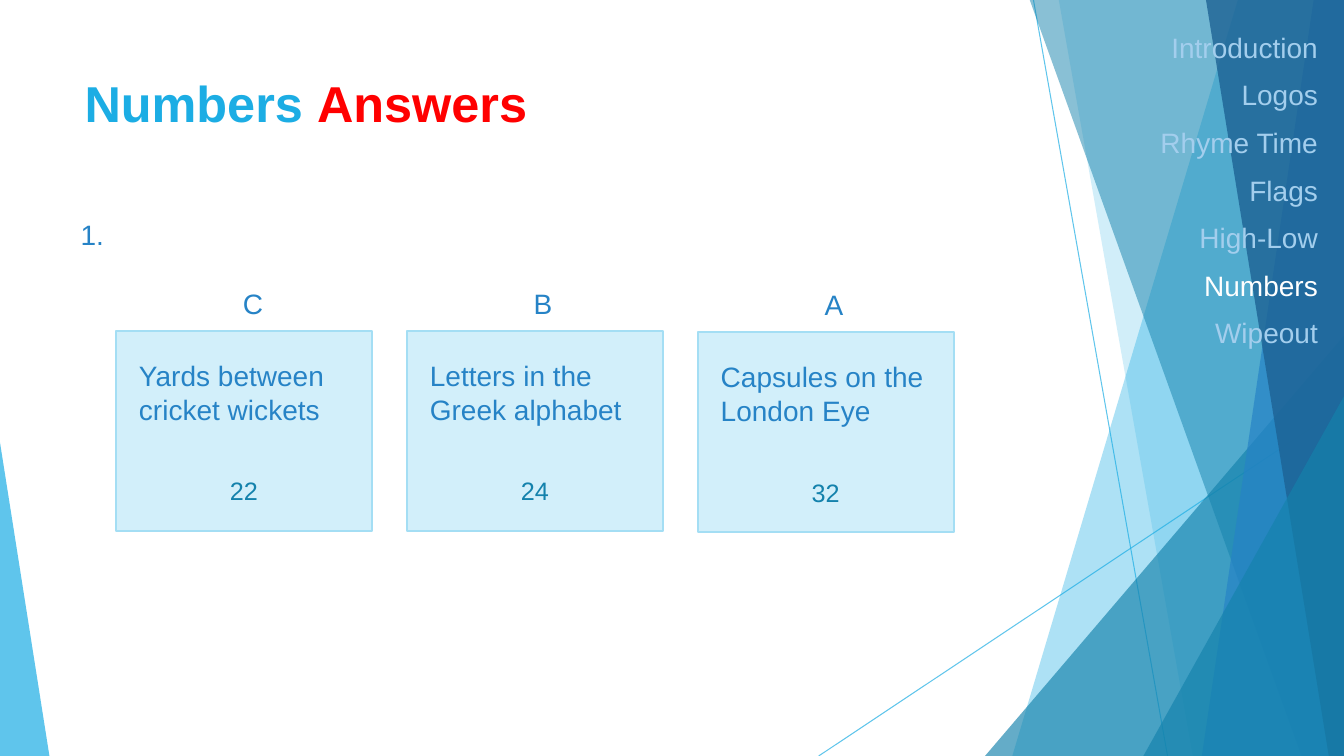
import pptx
import pptx.util
import pptx.dml.color
import pptx.enum.shapes
import pptx.enum.text
import pptx.oxml
import pptx.oxml.ns
from lxml import etree

Inches, Pt = pptx.util.Inches, pptx.util.Pt
RGB = pptx.dml.color.RGBColor
SHAPE = pptx.enum.shapes.MSO_SHAPE
ALIGN = pptx.enum.text.PP_ALIGN
ANCHOR = pptx.enum.text.MSO_ANCHOR

SKY, TEAL, BLUE = RGB(0x1C, 0xAD, 0xE4), RGB(0x14, 0x82, 0xAC), RGB(0x26, 0x83, 0xC6)
NAVY, RED, WHITE = RGB(0x1D, 0x62, 0x94), RGB(0xFF, 0, 0), RGB(0xFF, 0xFF, 0xFF)
PALE, EDGE, FADED = RGB(0xD2, 0xEF, 0xFA), RGB(0xA4, 0xDE, 0xF4), RGB(0xA3, 0xCE, 0xED)

WIDE, HIGH = 13.33, 7.5
TITLE = [("Numbers ", SKY), ("Answers", RED)]
ROUNDS = ["Introduction", "Logos", "Rhyme Time", "Flags", "High-Low", "Numbers", "Wipeout"]
ACTIVE = "Numbers"
# letter, clue, answer, top of card
CARDS = [
    ("C", "Yards between cricket wickets", "22", 3.28),
    ("B", "Letters in the Greek alphabet", "24", 3.28),
    ("A", "Capsules on the London Eye", "32", 3.29),
]
CARD_X, CARD_W, CARD_H, PITCH = 1.15, 2.54, 1.99, 2.885

RAYS = [((10.25, 0), (11.58, HIGH)), ((WIDE, 4.03), (8.12, HIGH))]
# bands: top left x, bottom left x, colour, opacity
# wedges: left, top, width, apex, colour, opacity
DECOR = [
    ("band", 12.28, 10.04, SKY, 36),
    ("band", 10.5, 11.83, SKY, 20),
    ("wedge", 9.77, 3.33, 3.56, 1, TEAL, 66),
    ("band", 10.21, 12.91, TEAL, 50),
    ("band", 13.03, 11.92, BLUE, 70),
    ("band", 11.96, 13.18, NAVY, 80),
    ("wedge", 11.34, 3.93, 1.99, 1, TEAL, 66),
    ("wedge", 0, 4.39, 0.49, 0, SKY, 70),
]

deck = pptx.Presentation()
deck.slide_width, deck.slide_height = Inches(WIDE), Inches(HIGH)
shapes = deck.slides.add_slide(deck.slide_layouts[6]).shapes


def fade(fill, alpha):
    """Set the opacity, in percent, of a solid fill's colour."""
    color = fill._xPr.find(".//" + pptx.oxml.ns.qn("a:srgbClr"))
    etree.SubElement(color, pptx.oxml.ns.qn("a:alpha"), val=str(alpha * 1000))


def paint(shape, color, alpha):
    shape.shadow.inherit = False
    shape.fill.solid()
    shape.fill.fore_color.rgb = color
    fade(shape.fill, alpha)
    shape.line.fill.background()


def add_ray(start, end):
    ray = shapes.add_connector(pptx.enum.shapes.MSO_CONNECTOR.STRAIGHT,
                               *map(Inches, start + end))
    ray.line.width = Pt(0.75)
    ray.line.color.rgb = SKY
    fade(ray.line.fill, 70)
    etree.SubElement(ray._element.spPr, pptx.oxml.ns.qn("a:effectLst"))


def add_band(top_x, low_x, color, alpha):
    pen = shapes.build_freeform(Inches(top_x), Inches(-0.01))
    pen.add_line_segments([(Inches(x), Inches(y)) for x, y in
                           [(WIDE, -0.01), (WIDE, HIGH), (low_x, HIGH)]])
    paint(pen.convert_to_shape(), color, alpha)


def add_wedge(left, top, width, apex, color, alpha):
    wedge = shapes.add_shape(SHAPE.ISOSCELES_TRIANGLE,
                             *map(Inches, (left, top, width, HIGH - top)))
    wedge.adjustments[0] = apex
    paint(wedge, color, alpha)


def write(para, text, color, size=20, **extra):
    run = para.add_run()
    run.text = text
    run.font.color.rgb = color
    form = {"name": "Arial", "size": Pt(size), **extra}
    for key, value in form.items():
        setattr(run.font, key, value)


def add_box(left, top, width, height, wrap=True):
    frame = shapes.add_textbox(*map(Inches, (left, top, width, height))).text_frame
    frame.word_wrap = wrap
    return frame


def add_card(left, top, letter, clue, answer):
    card = shapes.add_shape(SHAPE.RECTANGLE, *map(Inches, (left, top, CARD_W, CARD_H)))
    paint(card, PALE, 100)
    card.line.color.rgb = EDGE
    card.line.width = Pt(1.5)
    frame = card.text_frame
    frame.vertical_anchor = ANCHOR.BOTTOM
    frame.margin_bottom = Inches(0.25)
    frame.paragraphs[0].alignment = ALIGN.CENTER
    write(frame.paragraphs[0], answer, TEAL, 18)
    write(add_box(left + 0.13, top + 0.23, 2.32, 0.77).paragraphs[0], clue, BLUE)
    write(add_box(left + 1.16, top - 0.49, 0.37, 0.44, False).paragraphs[0], letter, BLUE)


for start, end in RAYS:
    add_ray(start, end)
draw = {"band": add_band, "wedge": add_wedge}
for kind, *args in DECOR:
    draw[kind](*args)

title = add_box(0.74, 0.67, 9.4, 1.44).paragraphs[0]
for text, color in TITLE:
    write(title, text, color, 36, bold=True)
write(add_box(0.7, 2.11, 0.45, 0.44, False).paragraphs[0], "1.", BLUE)

for i, (letter, clue, answer, top) in enumerate(CARDS):
    add_card(CARD_X + i * PITCH, top, letter, clue, answer)

menu = add_box(10.56, 0.25, 2.61, 4.52)
for i, name in enumerate(ROUNDS):
    para = menu.paragraphs[0] if i == 0 else menu.add_paragraph()
    para.alignment = ALIGN.RIGHT
    para.space_before = Pt(10)
    write(para, name, WHITE if name == ACTIVE else FADED)

deck.save("out.pptx")
